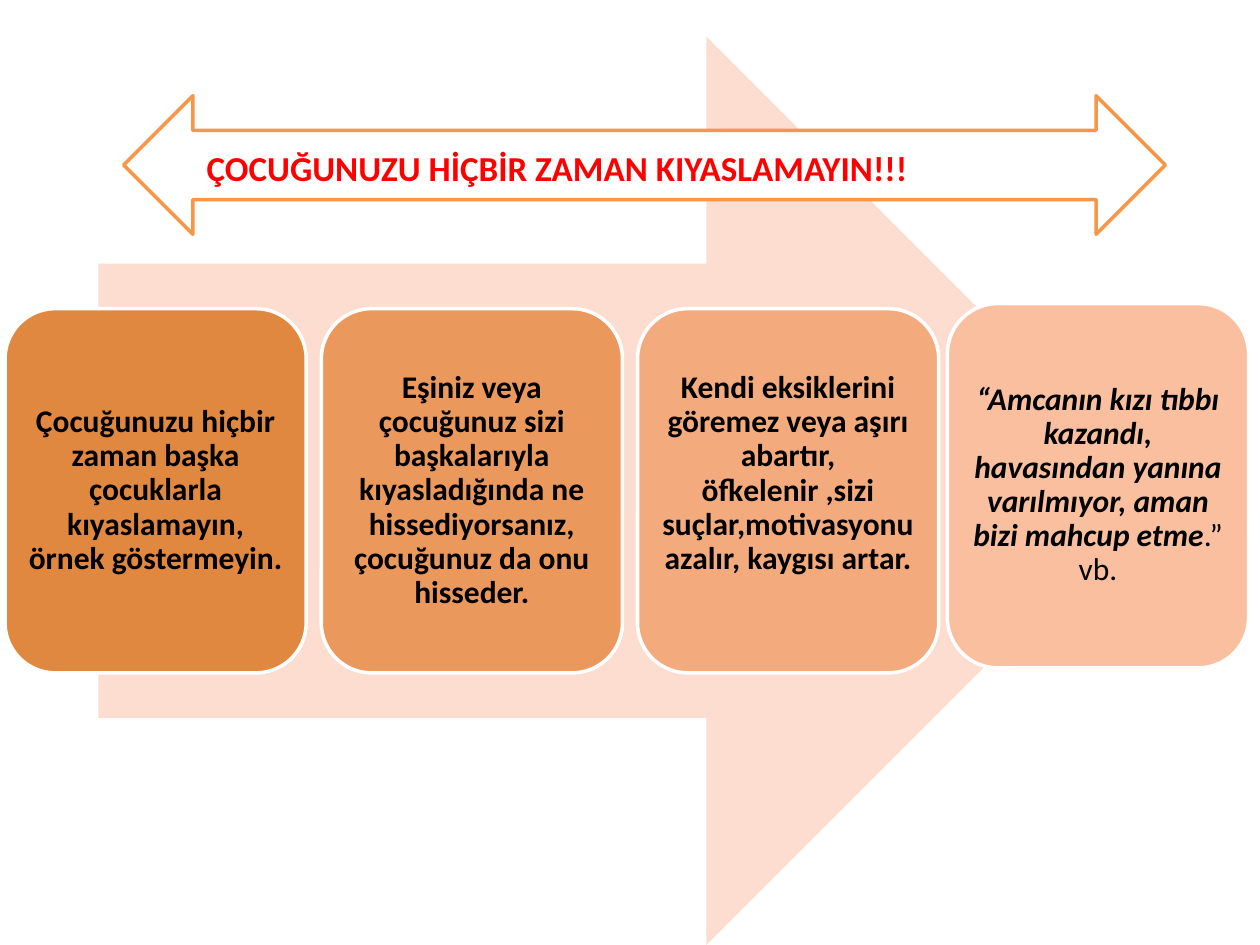
"""Build a slide advising parents never to compare their child with others."""
from typing import NamedTuple

from pptx import Presentation
from pptx.dml.color import RGBColor
from pptx.enum.shapes import MSO_SHAPE
from pptx.enum.text import MSO_ANCHOR, MSO_AUTO_SIZE, PP_ALIGN
from pptx.shapes.autoshape import Shape
from pptx.slide import Slide
from pptx.util import Pt

BLACK = RGBColor(0x00, 0x00, 0x00)
WHITE = RGBColor(0xFF, 0xFF, 0xFF)
RED = RGBColor(0xFF, 0x00, 0x00)
ORANGE = RGBColor(0xF7, 0x96, 0x46)
PALE_PEACH = RGBColor(0xFC, 0xDD, 0xCF)

FONT_NAME = "Calibri"
CARD_LEFT, CARD_TOP = 2.9, 176.4
CARD_WIDTH, CARD_HEIGHT, CARD_STEP = 172.1, 208.1, 180.7
CARD_INSET = 5
LINE_HEIGHT = 19.4


class Card(NamedTuple):
    text: str
    fill: RGBColor
    closing: str = ""
    shift_left: float = 0
    shift_up: float = 0
    extra_bottom: float = 0


CARDS = [
    Card("Çocuğunuzu hiçbir zaman başka çocuklarla kıyaslamayın, örnek göstermeyin.",
         RGBColor(0xE0, 0x88, 0x40)),
    Card("Eşiniz veya çocuğunuz sizi başkalarıyla kıyasladığında ne hissediyorsanız, "
         "çocuğunuz da onu hisseder.", RGBColor(0xEB, 0x98, 0x5D)),
    Card("Kendi eksiklerini göremez veya aşırı abartır, öfkelenir ,sizi "
         "suçlar,motivasyonu azalır, kaygısı artar.", RGBColor(0xF3, 0xAA, 0x7D),
         extra_bottom=LINE_HEIGHT),
    Card("“Amcanın kızı tıbbı kazandı, havasından yanına varılmıyor, aman bizi mahcup etme",
         RGBColor(0xFA, 0xBF, 0x9F), closing=".” vb.", shift_left=3.6, shift_up=2.9),
]


def add_shape(slide: Slide, kind: MSO_SHAPE, left: float, top: float, width: float,
              height: float, fill: RGBColor, line: RGBColor | None = None) -> Shape:
    """Add a flat preset shape measured in points."""
    shape = slide.shapes.add_shape(kind, Pt(left), Pt(top), Pt(width), Pt(height))
    shape.shadow.inherit = False
    shape.fill.solid()
    shape.fill.fore_color.rgb = fill
    if line is None:
        shape.line.fill.background()
    else:
        shape.line.color.rgb = line
        shape.line.width = Pt(2)
    return shape


def add_card(slide: Slide, card: Card, index: int) -> None:
    """Add one rounded advice card at its place in the row."""
    shape = add_shape(slide, MSO_SHAPE.ROUNDED_RECTANGLE,
                      CARD_LEFT + index * CARD_STEP - card.shift_left,
                      CARD_TOP - card.shift_up, CARD_WIDTH, CARD_HEIGHT, card.fill, WHITE)
    frame = shape.text_frame
    frame.word_wrap = True
    frame.vertical_anchor = MSO_ANCHOR.MIDDLE
    frame.margin_left = frame.margin_right = frame.margin_top = Pt(CARD_INSET)
    frame.margin_bottom = Pt(CARD_INSET + card.extra_bottom)
    paragraph = frame.paragraphs[0]
    paragraph.alignment = PP_ALIGN.CENTER
    paragraph.line_spacing = 0.9
    paragraph.font.name = FONT_NAME
    paragraph.font.size = Pt(18)
    paragraph.font.color.rgb = BLACK
    run = paragraph.add_run()
    run.text = card.text
    run.font.bold = True
    if card.closing:
        run.font.italic = True
        paragraph.add_run().text = card.closing


def place_title(slide: Slide, text: str) -> None:
    """Move the title placeholder onto the banner and format it."""
    title = slide.shapes.title
    title.left, title.top, title.width, title.height = Pt(110.9), Pt(79.9), Pt(475.9), Pt(31.7)
    frame = title.text_frame
    frame.text = text
    frame.word_wrap = True
    frame.auto_size = MSO_AUTO_SIZE.NONE
    frame.vertical_anchor = MSO_ANCHOR.TOP
    paragraph = frame.paragraphs[0]
    paragraph.alignment = PP_ALIGN.LEFT
    paragraph.font.name = FONT_NAME
    paragraph.font.size = Pt(20)
    paragraph.font.bold = True
    paragraph.font.color.rgb = RED
    slide.shapes._spTree.append(title._element)


def main() -> None:
    """Create and save the presentation."""
    presentation = Presentation()
    presentation.slide_width, presentation.slide_height = Pt(720), Pt(540)
    slide = presentation.slides.add_slide(presentation.slide_layouts[5])
    add_shape(slide, MSO_SHAPE.RIGHT_ARROW, 56.2, 20.9, 607, 519.1, PALE_PEACH)
    for index, card in enumerate(CARDS):
        add_card(slide, card, index)
    add_shape(slide, MSO_SHAPE.LEFT_RIGHT_ARROW, 70.6, 54.7, 595.4, 79.2, WHITE, ORANGE)
    place_title(slide, "ÇOCUĞUNUZU HİÇBİR ZAMAN KIYASLAMAYIN!!!")
    presentation.save("out.pptx")


if __name__ == "__main__":
    main()
